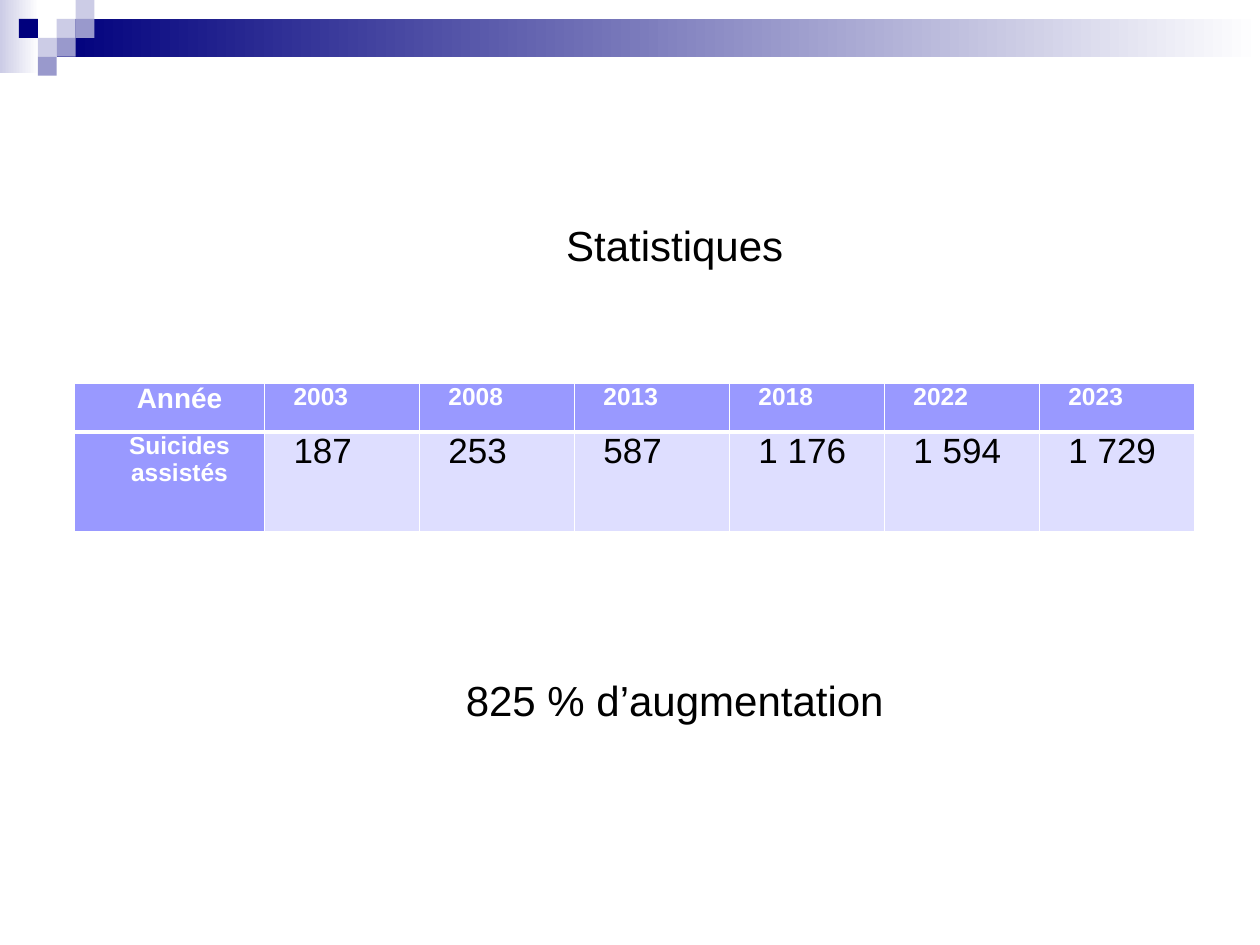
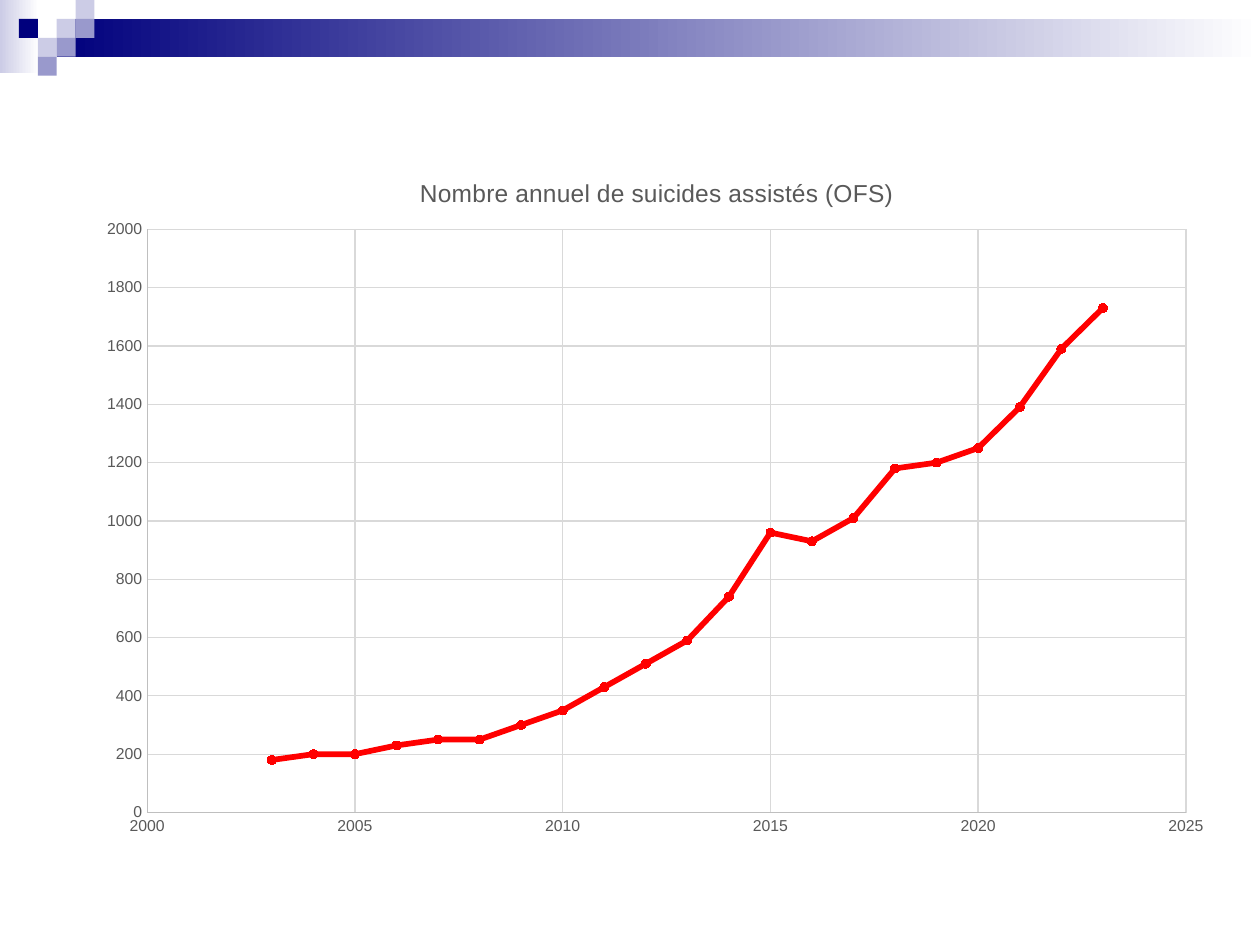
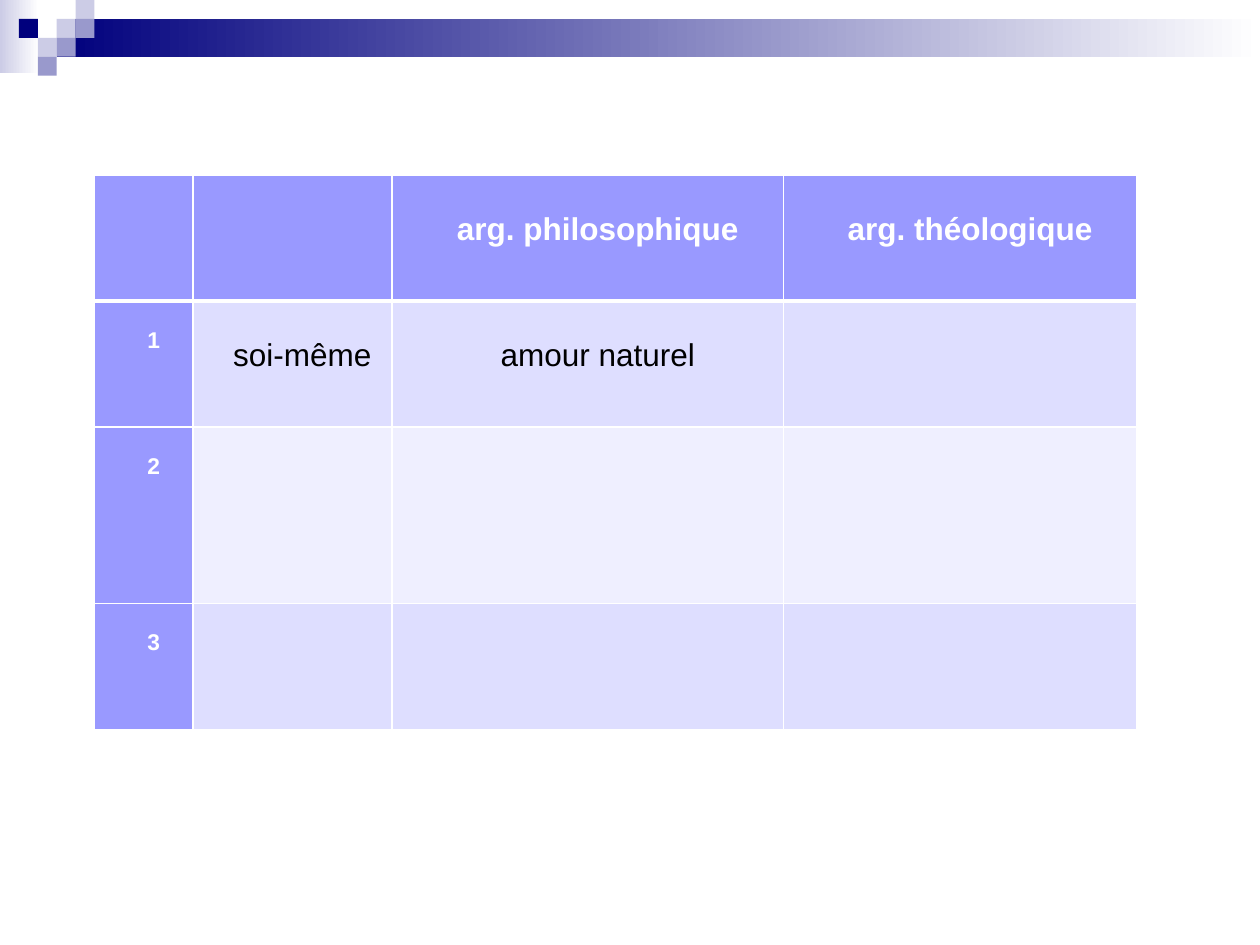
from lxml.etree import SubElement
from pptx import Presentation
from pptx.chart.data import XyChartData
from pptx.dml.color import RGBColor
from pptx.enum.chart import XL_CHART_TYPE, XL_MARKER_STYLE, XL_TICK_MARK
from pptx.enum.shapes import MSO_SHAPE
from pptx.enum.text import MSO_ANCHOR, PP_ALIGN
from pptx.oxml.ns import qn
from pptx.util import Inches, Pt

FONT = "Arial"
BLACK = RGBColor(0x00, 0x00, 0x00)
WHITE = RGBColor(0xFF, 0xFF, 0xFF)
NAVY = RGBColor(0x00, 0x00, 0x7D)
MID_BLUE = RGBColor(0x99, 0x99, 0xCC)
PALE_BLUE = RGBColor(0xCC, 0xCC, 0xE6)
HEAD_FILL = RGBColor(0x99, 0x99, 0xFF)
BAND_FILLS = [RGBColor(0xDE, 0xDE, 0xFF), RGBColor(0xEF, 0xEF, 0xFF)]
RED = RGBColor(0xFF, 0x00, 0x00)
GREY_TEXT = RGBColor(0x59, 0x59, 0x59)
GREY_AXIS = RGBColor(0xBF, 0xBF, 0xBF)
GREY_GRID = RGBColor(0xD9, 0xD9, 0xD9)

SQUARE = 0.15
SQUARES = [  # column, row, colour
    (3, 1, PALE_BLUE), (4, 0, PALE_BLUE), (4, 1, MID_BLUE), (2, 2, PALE_BLUE),
    (1, 1, NAVY), (3, 2, MID_BLUE), (2, 3, MID_BLUE),
]
FADES = [  # left, top, width, height, start colour
    (0, 0, 0.31, 0.58, PALE_BLUE), (0.45, 0.15, 9.55, 0.3, NAVY),
]

STATS_TEXT = ["Statistiques", "825 % d’augmentation"]
STATS = [
    ["Année", "2003", "2008", "2013", "2018", "2022", "2023"],
    ["Suicides\nassistés", "187", "253", "587", "1 176", "1 594", "1 729"],
]
ARGUMENTS = [
    ["", "", "arg. philosophique", "arg. théologique"],
    ["1", "soi-même", "amour naturel", ""],
    ["2", "", "", ""],
    ["3", "", "", ""],
]

CHART_TITLE = "Nombre annuel de suicides assistés (OFS)"
FIRST_YEAR = 2003
SUICIDES = [180, 200, 200, 230, 250, 250, 300, 350, 430, 510, 590, 740, 960, 930,
            1010, 1180, 1200, 1250, 1390, 1590, 1730]


def style_font(font, size, color, bold=False):
    font.name, font.size, font.bold = FONT, Pt(size), bold
    font.color.rgb = color


def add_rect(slide, left, top, width, height):
    sp = slide.shapes.add_shape(MSO_SHAPE.RECTANGLE, Inches(left), Inches(top),
                                Inches(width), Inches(height))
    sp.shadow.inherit = False
    sp.line.fill.background()
    return sp


def decorate_master(prs, slide):
    """Draw the banner on a slide, then move it to the master shared by all slides."""
    banner = []
    for left, top, width, height, color in FADES:
        sp = add_rect(slide, left, top, width, height)
        sp.fill.gradient()
        sp.fill.gradient_angle = 0
        for stop, stop_color in zip(sp.fill.gradient_stops, (color, WHITE)):
            stop.color.rgb = stop_color
        banner.append(sp)
    for col, row, color in SQUARES:
        sp = add_rect(slide, col * SQUARE, row * SQUARE, SQUARE, SQUARE)
        sp.fill.solid()
        sp.fill.fore_color.rgb = color
        banner.append(sp)
    tree = prs.slide_master.element.cSld.spTree
    for number, sp in enumerate(banner, 100):
        sp.element.nvSpPr.cNvPr.set("id", str(number))
        tree.append(sp.element)


def set_borders(cell, top, bottom):
    tc_pr = cell._tc.get_or_add_tcPr()
    widths = {"a:lnL": 1, "a:lnR": 1, "a:lnT": top, "a:lnB": bottom}
    for i, (tag, width) in enumerate(widths.items()):
        ln = tc_pr.makeelement(qn(tag), {"w": str(Pt(width))})
        fill = SubElement(ln, qn("a:solidFill"))
        SubElement(fill, qn("a:srgbClr"), val=str(WHITE))
        tc_pr.insert(i, ln)


def add_grid(slide, left, top, col_widths, row_heights, rows, style):
    """Add a table; style(row, col) gives text size, alignment and top margin."""
    table = slide.shapes.add_table(
        len(rows), len(col_widths), Inches(left), Inches(top),
        Inches(sum(col_widths)), Inches(sum(row_heights))).table
    for column, width in zip(table.columns, col_widths):
        column.width = Inches(width)
    for r, (row, height) in enumerate(zip(rows, row_heights)):
        table.rows[r].height = Inches(height)
        for c, text in enumerate(row):
            size, align, margin_top = style(r, c)
            is_head = r == 0 or c == 0
            cell = table.cell(r, c)
            cell.fill.solid()
            cell.fill.fore_color.rgb = HEAD_FILL if is_head else BAND_FILLS[(r - 1) % 2]
            set_borders(cell, 3 if r == 1 else 1, 3 if r == 0 else 1)
            cell.margin_left = cell.margin_right = Inches(0.07)
            cell.margin_top, cell.margin_bottom = Inches(margin_top), 0
            cell.vertical_anchor = MSO_ANCHOR.TOP
            cell.text_frame.text = text
            for p in cell.text_frame.paragraphs:
                p.alignment = align
                p._p.get_or_add_pPr().set("indent", str(Inches(0.16)))
                style_font(p.font, size, WHITE if is_head else BLACK, is_head)
                for run in p.runs:
                    style_font(run.font, size, WHITE if is_head else BLACK, is_head)


def stats_style(row, col):
    if col == 0:
        return (16 if row == 0 else 14), PP_ALIGN.CENTER, 0
    return (14 if row == 0 else 20), PP_ALIGN.JUSTIFY, 0


def arguments_style(row, col):
    if row > 0 and col == 0:
        return 13, PP_ALIGN.CENTER, 0.21
    return 18, PP_ALIGN.CENTER, 0.29


def set_layout(parent, index, **fractions):
    """Place a chart part by hand, in fractions of the chart's size."""
    for old in parent.findall(qn("c:layout")):
        parent.remove(old)
    layout = parent.makeelement(qn("c:layout"), {})
    parent.insert(index, layout)
    manual = SubElement(layout, qn("c:manualLayout"))
    if "w" in fractions:
        SubElement(manual, qn("c:layoutTarget"), val="inner")
    for tag in ("xMode", "yMode"):
        SubElement(manual, qn(f"c:{tag}"), val="edge")
    for tag, value in fractions.items():
        SubElement(manual, qn(f"c:{tag}"), val=str(value))


def style_axis(axis, low, high, step):
    axis.minimum_scale, axis.maximum_scale, axis.major_unit = low, high, step
    axis.major_tick_mark = axis.minor_tick_mark = XL_TICK_MARK.NONE
    axis.has_major_gridlines = True
    for line, color in ((axis.format.line, GREY_AXIS),
                        (axis.major_gridlines.format.line, GREY_GRID)):
        line.width = Pt(0.75)
        line.color.rgb = color
    style_font(axis.tick_labels.font, 9, GREY_TEXT)
    axis.tick_labels.number_format = "General"
    axis.tick_labels.number_format_is_linked = False


def add_suicides_chart(slide):
    data = XyChartData()
    points = data.add_series("Suicides assistés")
    for year, count in enumerate(SUICIDES, FIRST_YEAR):
        points.add_data_point(year, count)
    chart = slide.shapes.add_chart(
        XL_CHART_TYPE.XY_SCATTER_LINES, Inches(0.67), Inches(1.15),
        Inches(9.06), Inches(5.59), data).chart
    style_font(chart.font, 10, BLACK)
    chart.has_legend = False
    chart.has_title = True
    tf = chart.chart_title.text_frame
    tf.text = CHART_TITLE
    style_font(tf.paragraphs[0].runs[0].font, 14, GREY_TEXT)
    style_axis(chart.category_axis, 2000, 2025, 5)
    style_axis(chart.value_axis, 0, 2000, 200)

    plot = chart.plots[0]
    plot.vary_by_categories = False
    series = plot.series[0]
    series.smooth = False
    series.format.line.width = Pt(3.25)
    series.format.line.color.rgb = RED
    marker = series.marker
    marker.style, marker.size = XL_MARKER_STYLE.CIRCLE, 5
    marker.format.fill.solid()
    marker.format.fill.fore_color.rgb = RED
    marker.format.line.color.rgb = RED

    chart_xml = chart.element.find(qn("c:chart"))
    set_layout(chart_xml.find(qn("c:title")), 1, x=0.29, y=0.04)
    set_layout(chart_xml.find(qn("c:plotArea")), 0, x=0.055, y=0.12, w=0.91, h=0.828)


def add_stats_title(slide):
    title = slide.shapes.title
    title.left, title.top = Inches(1.22), Inches(1.68)
    title.width, title.height = Inches(8.27), Inches(4.14)
    tf = title.text_frame
    tf.text = "\n".join(STATS_TEXT)
    tf.vertical_anchor = MSO_ANCHOR.MIDDLE
    for p in tf.paragraphs:
        p.alignment = PP_ALIGN.CENTER
        style_font(p.runs[0].font, 24, BLACK)
    tf.paragraphs[1].space_before = Pt(231)


def main():
    prs = Presentation()
    prs.slide_width, prs.slide_height = Inches(10), Inches(7.5)
    title_only, blank = prs.slide_layouts[5], prs.slide_layouts[6]

    stats = prs.slides.add_slide(title_only)
    decorate_master(prs, stats)
    add_stats_title(stats)
    add_grid(stats, 0.59, 3.04, [1.51] + [1.23] * 6, [0.39, 0.79], STATS, stats_style)

    add_suicides_chart(prs.slides.add_slide(blank))

    arguments = prs.slides.add_slide(blank)
    add_grid(arguments, 0.75, 1.39, [0.78, 1.58, 3.11, 2.8], [1, 1, 1.4, 1],
             ARGUMENTS, arguments_style)
    prs.save("out.pptx")


if __name__ == "__main__":
    main()
